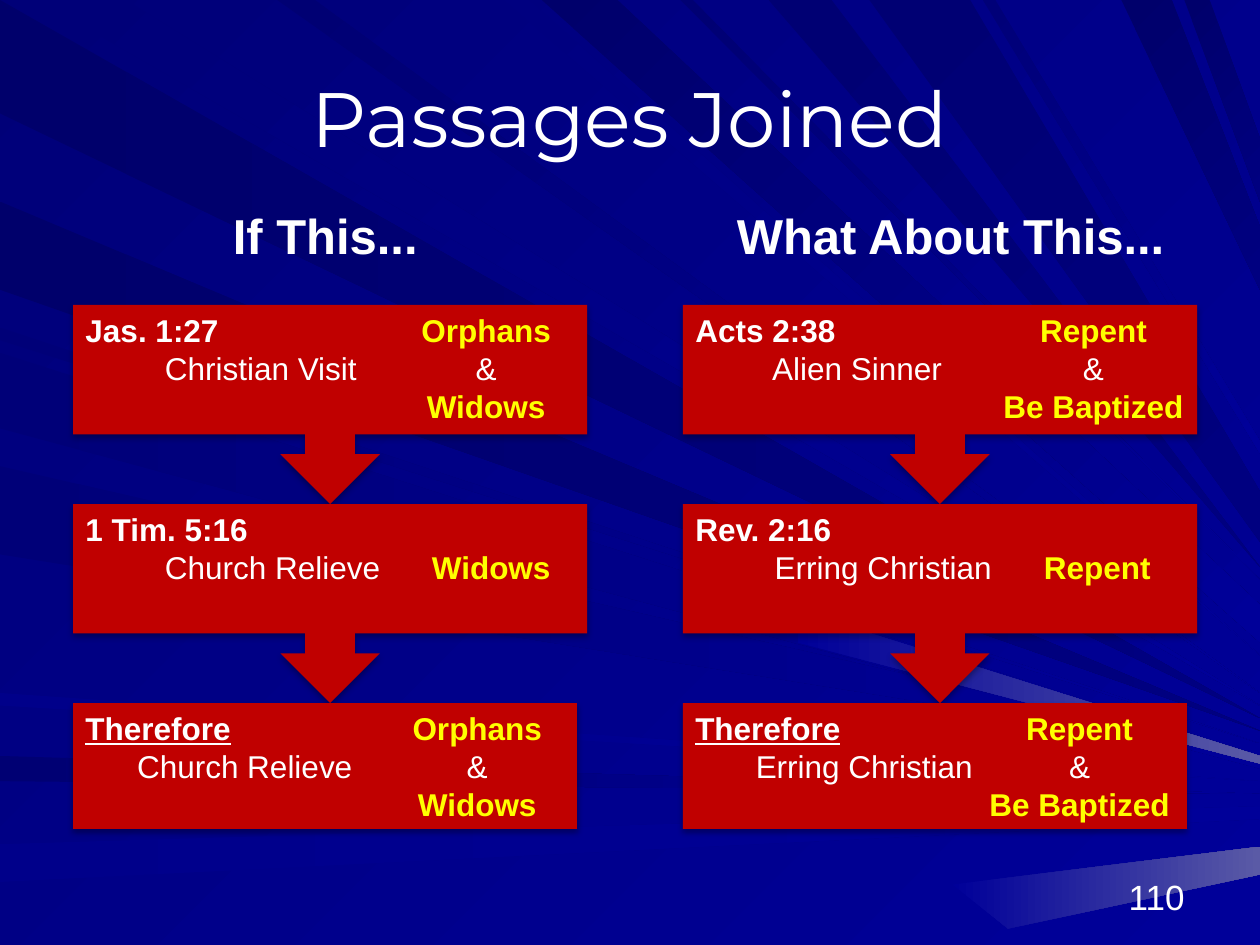
from lxml import etree
from pptx import Presentation
from pptx.dml.color import RGBColor
from pptx.enum.shapes import MSO_SHAPE
from pptx.enum.text import MSO_ANCHOR, PP_ALIGN
from pptx.oxml import parse_xml
from pptx.oxml.ns import nsdecls, qn
from pptx.util import Inches, Pt

CALLOUT, RECT = MSO_SHAPE.DOWN_ARROW_CALLOUT, MSO_SHAPE.RECTANGLE
TOP, MIDDLE, BOTTOM = MSO_ANCHOR.TOP, MSO_ANCHOR.MIDDLE, MSO_ANCHOR.BOTTOM
LEFT, CENTER, RIGHT = PP_ALIGN.LEFT, PP_ALIGN.CENTER, PP_ALIGN.RIGHT

WHITE = RGBColor(0xFF, 0xFF, 0xFF)
YELLOW = RGBColor(0xFF, 0xFF, 0x00)
RED = RGBColor(0xC0, 0x00, 0x00)
DEEP = RGBColor(0x00, 0x00, 0x6B)
DIM = RGBColor(0x00, 0x00, 0x73)
NIGHT = RGBColor(0x00, 0x00, 0x78)
NAVY = RGBColor(0x00, 0x00, 0x80)
SOFT = RGBColor(0x00, 0x00, 0x8A)
BLUE = RGBColor(0x00, 0x00, 0x99)
HAZE = RGBColor(0x5A, 0x5A, 0xA6)

# Rays run from a span on the left or top edge to a tip on the right edge:
# span start, span end, tip height, tip size, two colours
SIDE_RAYS = [
    (0, 0.9, 5.7, 0, DEEP, NAVY),
    (6, 6.2, 6.3, 0, DIM, BLUE),
    (6.7, 7, 6.4, 0.1, SOFT, BLUE),
    (2.6, 2.7, 5.9, 0, NIGHT, BLUE),
    (1.6, 2.3, 5.8, 0, DEEP, NAVY),
    (2.8, 3.4, 6, 0.1, NIGHT, BLUE),
    (3.7, 4.4, 6, 0, NIGHT, BLUE),
    (5.5, 5.6, 6.2, 0, SOFT, BLUE),
]
TOP_RAYS = [
    (0.3, 1, 5.6, 0, NIGHT, BLUE),
    (2.2, 2.5, 5.5, 0, DIM, BLUE),
    (4, 4.2, 5.2, 0, NAVY, BLUE),
    (4.3, 4.9, 4.8, 0.3, DEEP, BLUE),
    (5.4, 5.5, 4.6, 0, DIM, BLUE),
    (6.1, 6.6, 4.5, 0, DIM, NAVY),
    (6.9, 7.7, 3.9, 0.4, DIM, NAVY),
    (7.8, 7.9, 3.5, 0.1, NIGHT, BLUE),
    (8.9, 9.3, 1.8, 0.5, DEEP, NAVY),
    (9.4, 9.6, 1.1, 0.5, DEEP, NAVY),
]
# Pale glints near the right edge
GLINTS = [
    [(6.35, 4.85), (10, 6), (10, 6.06), (6.33, 5.1)],
    [(7.56, 7.02), (10, 6.72), (10, 6.94), (8, 7.37)],
]

# Columns: left edge, then boxes of verse, doer, doer tab, word tab, words
COLUMNS = [
    (0.58, [
        ("Jas. 1:27", "Christian Visit", 0.63, 3.18, ["Orphans", "Widows"]),
        ("1 Tim. 5:16", "Church Relieve", 0.63, 3.22, ["Widows"]),
        ("Therefore", "Church Relieve", 0.41, 3.11, ["Orphans", "Widows"])]),
    (5.42, [
        ("Acts 2:38", "Alien Sinner", 0.61, 3.16, ["Repent", "Be Baptized"]),
        ("Rev. 2:16", "Erring Christian", 0.63, 3.19, ["Repent"]),
        ("Therefore", "Erring Christian", 0.48, 3.05, ["Repent", "Be Baptized"])]),
]
FIRST, STEP = 2.42, 1.58


def blend(fill, start, end, angle):
    fill.gradient()
    fill.gradient_angle = (360 - angle) % 360
    for stop, color, place in zip(fill.gradient_stops, (start, end), (0, 1)):
        stop.color.rgb = color
        stop.position = place


def add_ray(group, points, start, end, angle):
    spots = [(Inches(x), Inches(y)) for x, y in points]
    pen = group.shapes.build_freeform(*spots[0])
    pen.add_line_segments(spots[1:], close=True)
    ray = pen.convert_to_shape()
    ray.shadow.inherit = False
    blend(ray.fill, start, end, angle)
    ray.line.fill.background()


def add_rays(slide):
    group = slide.shapes.add_group_shape()
    for low, high, tip, size, start, end in SIDE_RAYS:
        points = [(0, low), (10, tip), (10, tip + size), (0, high)]
        add_ray(group, points, start, end, 0)
    for low, high, tip, size, start, end in TOP_RAYS:
        points = [(low, 0), (high, 0), (10, tip), (10, tip + size)]
        add_ray(group, points, start, end, 45)
    for points in GLINTS:
        add_ray(group, points, BLUE, HAZE, 0)
    # Keep the rays behind the title
    slide.shapes.element.insert(2, group.element)


def add_run(para, text, size, color=WHITE, bold=False, face="Arial"):
    run = para.add_run()
    run.text = text
    font = run.font
    font.name, font.size, font.bold = face, Pt(size), bold
    font.color.rgb = color
    return run


def add_label(slide, text, box, size, bold=False, align=LEFT, anchor=TOP, wrap=True):
    frame = slide.shapes.add_textbox(*map(Inches, box)).text_frame
    frame.word_wrap = wrap
    frame.vertical_anchor = anchor
    para = frame.paragraphs[0]
    para.alignment = align
    add_run(para, text, size, bold=bold)


def set_tabs(para, stops):
    tabs = etree.SubElement(para._p.get_or_add_pPr(), qn("a:tabLst"))
    for place, kind in stops:
        etree.SubElement(tabs, qn("a:tab"), pos=str(Inches(place)), algn=kind)


def add_shade(shape):
    shape._element.spPr.append(parse_xml(
        f'<a:effectLst {nsdecls("a")}><a:outerShdw blurRad="{Pt(3.5)}" dist="{Pt(2.2)}" '
        'dir="5400000" rotWithShape="0"><a:srgbClr val="000000"><a:alpha val="32000"/>'
        '</a:srgbClr></a:outerShdw></a:effectLst>'))


def add_box(slide, left, top, last, verse, doer, indent, center, words):
    kind, wide, high = (RECT, 4, 1) if last else (CALLOUT, 4.08, STEP)
    box = slide.shapes.add_shape(kind, *map(Inches, (left, top, wide, high)))
    box.fill.solid()
    box.fill.fore_color.rgb = RED
    box.line.fill.background()
    add_shade(box)
    frame = box.text_frame
    frame.word_wrap = True
    frame.vertical_anchor = TOP
    # Each line is a list of text, colour, bold
    head, who = (verse, WHITE, True), ("\t" + doer, WHITE, False)
    if len(words) == 1:
        lines = [[head], [who, ("\t" + words[0], YELLOW, True)]]
    else:
        lines = [[head, ("\t" + words[0], YELLOW, True)],
                 [who, ("\t&", WHITE, False)],
                 [("\t\t" + words[1], YELLOW, True)]]
    for num, line in enumerate(lines):
        para = frame.paragraphs[0] if num == 0 else frame.add_paragraph()
        para.alignment = LEFT
        set_tabs(para, [(indent, "l"), (center, "ctr")])
        for text, color, bold in line:
            run = add_run(para, text, 18, color, bold)
            if last and text == verse:
                run.font.underline = True


def add_title(slide, text):
    title = slide.shapes.title
    title.left, title.top, title.width, title.height = map(Inches, (0.5, 0.3, 9, 1.25))
    frame = title.text_frame
    frame.vertical_anchor = MIDDLE
    para = frame.paragraphs[0]
    para.alignment = CENTER
    add_run(para, text, 44, face="Montserrat")


def main():
    deck = Presentation()
    deck.slide_width, deck.slide_height = Inches(10), Inches(7.5)
    slide = deck.slides.add_slide(deck.slide_layouts[5])

    # Backdrop and title
    blend(slide.background.fill, NIGHT, BLUE, 45)
    add_rays(slide)
    add_title(slide, "Passages Joined")
    add_label(slide, "110", (7.17, 6.83, 2.33, 0.5), 20, align=RIGHT, anchor=BOTTOM)

    # Two chains of reasoning
    for left, boxes in COLUMNS:
        for row, parts in enumerate(boxes):
            add_box(slide, left, FIRST + row * STEP, row == len(boxes) - 1, *parts)

    # Column headings
    add_label(slide, "If This...", (1.75, 1.58, 1.69, 0.57), 28, bold=True, wrap=False)
    add_label(slide, "What About This...", (5.75, 1.58, 3.83, 0.57), 28, bold=True)
    deck.save("out.pptx")


if __name__ == "__main__":
    main()
